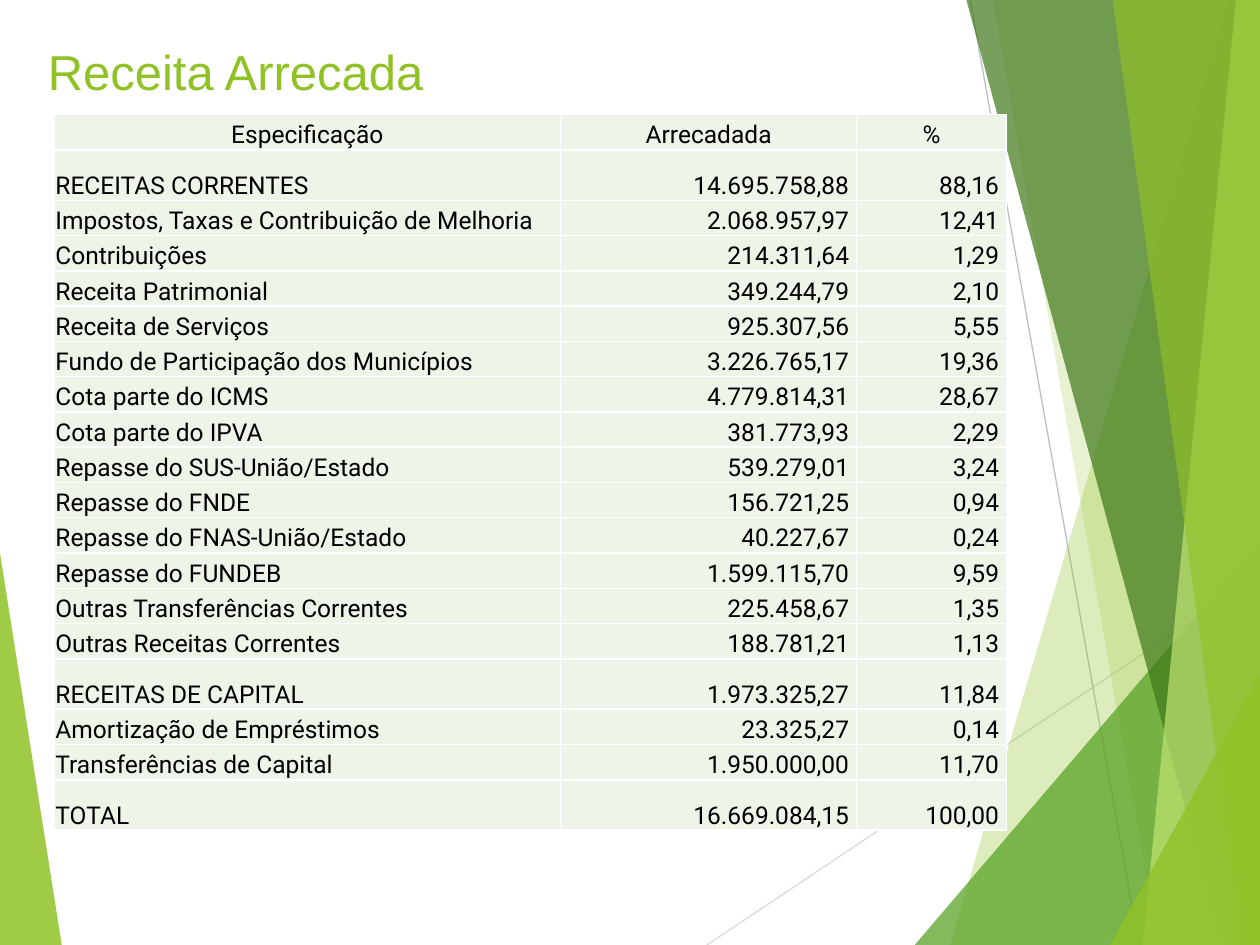
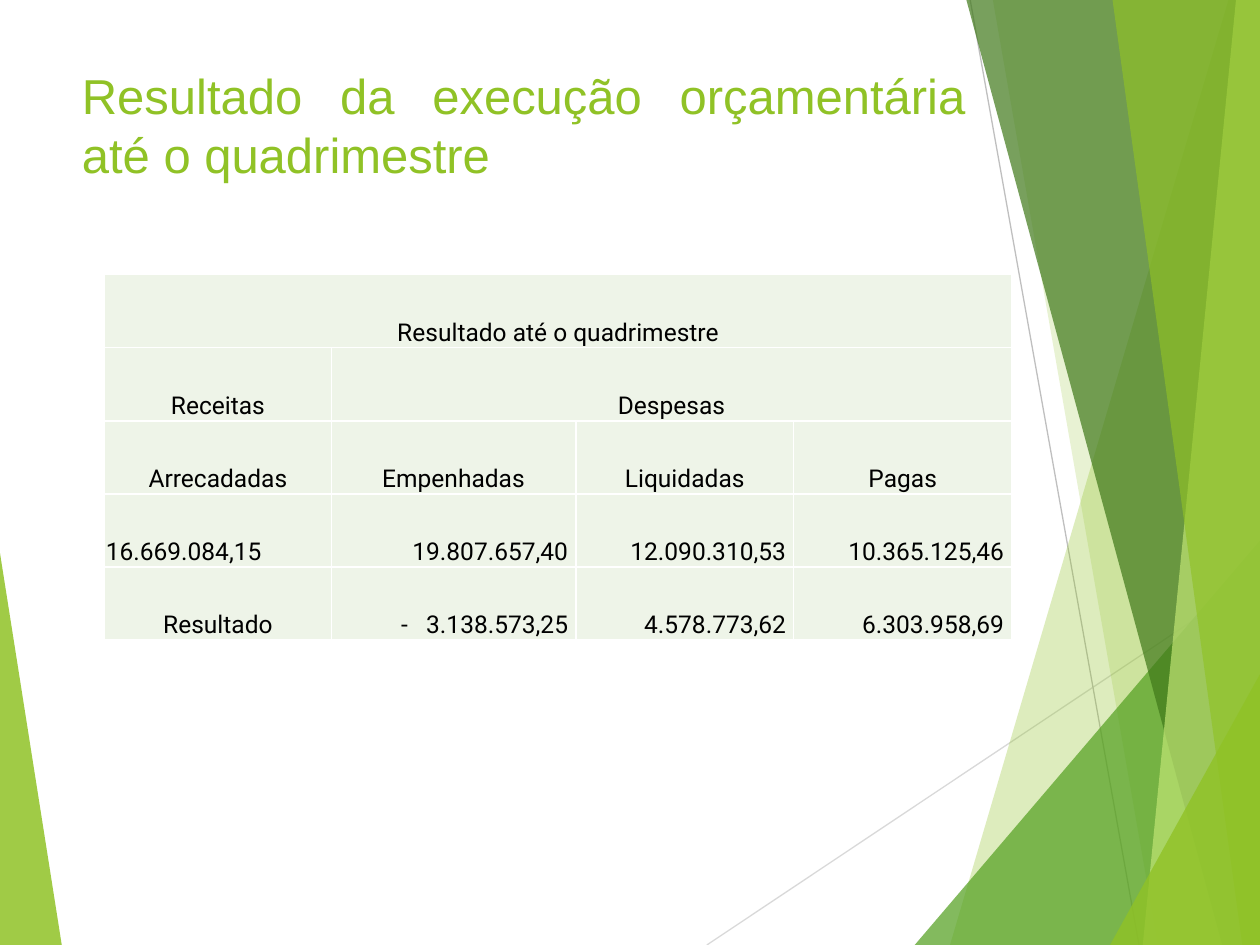
import pptx
import pptx.dml.color
import pptx.enum.text
import pptx.oxml
import pptx.oxml.ns
import pptx.util
from pptx.dml.color import RGBColor
from pptx.enum.text import MSO_ANCHOR, MSO_AUTO_SIZE, PP_ALIGN
from pptx.oxml.ns import qn
from pptx.util import Inches

SLIDE_W, SLIDE_H = 10, 7.5
LIME = RGBColor(0x90, 0xC2, 0x26)
GREEN = RGBColor(0x54, 0xA0, 0x21)
DARK_GREEN = RGBColor(0x3F, 0x78, 0x19)
PALE_LIME = RGBColor(0xC0, 0xE4, 0x74)
CELL_GREEN = RGBColor(0xEE, 0xF4, 0xE8)
LIGHT_GREY = RGBColor(0xD9, 0xD9, 0xD9)
MID_GREY = RGBColor(0xBF, 0xBF, 0xBF)
BLACK = RGBColor(0, 0, 0)
WHITE = RGBColor(0xFF, 0xFF, 0xFF)
TITLE_FONT, TABLE_FONT = "Arial", "Roboto"
ALIGNMENTS = {"l": PP_ALIGN.LEFT, "c": PP_ALIGN.CENTER, "r": PP_ALIGN.RIGHT}

LEFT_WEDGE = ([(0, 4.39), (0.49, SLIDE_H), (0, SLIDE_H)], LIME, 85)
RAYS = [
    ((5.61, SLIDE_H), (SLIDE_W, 4.57), LIGHT_GREY),
    ((7.7, 0), (9.04, SLIDE_H), MID_GREY),
]


def right_band(top_x, bottom_x, color, opacity):
    """Full-height band running to the right edge of the slide."""
    return ([(top_x, 0), (bottom_x, SLIDE_H), (SLIDE_W, SLIDE_H), (SLIDE_W, 0)],
            color, opacity)


def corner_wedge(left, top, color, opacity):
    """Triangle in the bottom right corner of the slide."""
    return ([(left, SLIDE_H), (SLIDE_W, top), (SLIDE_W, SLIDE_H)], color, opacity)


RIGHT_FACETS = [
    right_band(9.75, 7.54, LIME, 30),
    right_band(7.88, 9.19, LIME, 20),
    corner_wedge(7.26, 4.29, GREEN, 72),
    right_band(7.67, 9.7, DARK_GREEN, 70),
    right_band(9.81, 9.07, PALE_LIME, 70),
    right_band(8.83, 9.86, LIME, 65),
    corner_wedge(8.81, 5.35, LIME, 80),
]

REVENUE_ROWS = [
    ("Especificação", "Arrecadada", "%"),
    ("RECEITAS CORRENTES", "14.695.758,88", "88,16"),
    ("Impostos, Taxas e Contribuição de Melhoria", "2.068.957,97", "12,41"),
    ("Contribuições", "214.311,64", "1,29"),
    ("Receita Patrimonial", "349.244,79", "2,10"),
    ("Receita de Serviços", "925.307,56", "5,55"),
    ("Fundo de Participação dos Municípios", "3.226.765,17", "19,36"),
    ("Cota parte do ICMS", "4.779.814,31", "28,67"),
    ("Cota parte do IPVA", "381.773,93", "2,29"),
    ("Repasse do SUS-União/Estado", "539.279,01", "3,24"),
    ("Repasse do FNDE", "156.721,25", "0,94"),
    ("Repasse do FNAS-União/Estado", "40.227,67", "0,24"),
    ("Repasse do FUNDEB", "1.599.115,70", "9,59"),
    ("Outras Transferências Correntes", "225.458,67", "1,35"),
    ("Outras Receitas Correntes", "188.781,21", "1,13"),
    ("RECEITAS DE CAPITAL", "1.973.325,27", "11,84"),
    ("Amortização de Empréstimos", "23.325,27", "0,14"),
    ("Transferências de Capital", "1.950.000,00", "11,70"),
    ("TOTAL", "16.669.084,15", "100,00"),
]
GROUP_ROWS = ("RECEITAS CORRENTES", "RECEITAS DE CAPITAL", "TOTAL")

RESULT_ROWS = [
    ("Resultado até o quadrimestre", "", "", ""),
    ("Receitas", "Despesas", "", ""),
    ("Arrecadadas", "Empenhadas", "Liquidadas", "Pagas"),
    ("16.669.084,15", "19.807.657,40", "12.090.310,53", "10.365.125,46"),
    ("Resultado", "- 3.138.573,25", "4.578.773,62", "6.303.958,69"),
]
RESULT_ALIGNMENTS = ["cccc", "cccc", "cccc", "lrrr", "crrr"]


def add_facet(slide, points, color, opacity):
    corners = [(Inches(x), Inches(y)) for x, y in points]
    builder = slide.shapes.build_freeform(*corners[0])
    builder.add_line_segments(corners[1:], close=True)
    facet = builder.convert_to_shape()
    facet.shadow.inherit = False
    facet.fill.solid()
    facet.fill.fore_color.rgb = color
    facet.line.fill.background()
    tint = facet.element.spPr.find(qn("a:solidFill")).find(qn("a:srgbClr"))
    pptx.oxml.ns  # namespaces used for the opacity element
    tint.append(pptx.oxml.parse_xml(
        f'<a:alpha {pptx.oxml.ns.nsdecls("a")} val="{opacity * 1000}"/>'))


def add_ray(slide, start, end, color):
    ray = slide.shapes.add_connector(
        pptx.enum.shapes.MSO_CONNECTOR.STRAIGHT,
        *(Inches(value) for value in start + end))
    ray.line.color.rgb = color
    ray.line.width = pptx.util.Pt(0.75)
    ray.element.spPr.append(
        pptx.oxml.parse_xml(f'<a:effectLst {pptx.oxml.ns.nsdecls("a")}/>'))


def add_backdrop(slide):
    add_facet(slide, *LEFT_WEDGE)
    for ray in RAYS:
        add_ray(slide, *ray)
    for facet in RIGHT_FACETS:
        add_facet(slide, *facet)


def add_run(paragraph, text, font_name, size, color):
    run = paragraph.add_run()
    run.text = text
    run.font.name = font_name
    run.font.size = pptx.util.Pt(size)
    run.font.color.rgb = color
    return run


def place_title(slide, text, box, alignment):
    title = slide.shapes.title
    title.left, title.top, title.width, title.height = map(Inches, box)
    frame = title.text_frame
    frame.word_wrap = True
    frame.auto_size = MSO_AUTO_SIZE.NONE
    frame.vertical_anchor = MSO_ANCHOR.TOP
    paragraph = frame.paragraphs[0]
    paragraph.alignment = alignment
    add_run(paragraph, text, TITLE_FONT, 28, LIME)
    title.element.getparent().append(title.element)  # in front of the backdrop


def outline_cell(cell):
    """Draw the white 1 pt border; its lines must precede the cell fill."""
    properties = cell._tc.get_or_add_tcPr()
    for position, side in enumerate(("lnL", "lnR", "lnT", "lnB")):
        properties.insert(position, pptx.oxml.parse_xml(
            f'<a:{side} {pptx.oxml.ns.nsdecls("a")} w="12700"><a:solidFill>'
            f'<a:srgbClr val="{WHITE}"/></a:solidFill></a:{side}>'))


def fill_cell(cell, text, align):
    cell.fill.solid()
    cell.fill.fore_color.rgb = CELL_GREEN
    outline_cell(cell)
    cell.vertical_anchor = MSO_ANCHOR.BOTTOM
    cell.margin_left = cell.margin_top = Inches(0.01)
    cell.margin_right = Inches(0.06 if align == "r" else 0.01)
    cell.margin_bottom = 0
    paragraph = cell.text_frame.paragraphs[0]
    paragraph.alignment = ALIGNMENTS[align]
    if text.startswith("- "):
        sign = add_run(paragraph, "- ", TABLE_FONT, 14, BLACK)
        sign.font._element.set("spc", "350")  # sets the minus sign apart
        text = text[2:]
    if text:
        add_run(paragraph, text, TABLE_FONT, 14, BLACK)


def add_finance_table(slide, origin, widths, heights, rows, alignments, merges=()):
    left, top = origin
    table = slide.shapes.add_table(
        len(rows), len(widths), Inches(left), Inches(top),
        Inches(sum(widths)), Inches(sum(heights))).table
    table.first_row = table.horz_banding = False
    for column, width in zip(table.columns, widths):
        column.width = Inches(width)
    for row, height in zip(table.rows, heights):
        row.height = Inches(height)
    for r, (texts, aligns) in enumerate(zip(rows, alignments)):
        for c, (text, align) in enumerate(zip(texts, aligns)):
            fill_cell(table.cell(r, c), text, align)
    for first, last in merges:
        table.cell(*first).merge(table.cell(*last))


def add_title_slide(deck):
    slide = deck.slides.add_slide(deck.slide_layouts[5])
    add_backdrop(slide)
    return slide


def build_revenue_slide(deck):
    slide = add_title_slide(deck)
    place_title(slide, "Receita Arrecada", (0.28, 0.28, 9, 0.71), PP_ALIGN.LEFT)
    heights = [0.4 if row[0] in GROUP_ROWS else 0.28 for row in REVENUE_ROWS]
    alignments = ["ccc"] + ["lrr"] * (len(REVENUE_ROWS) - 1)
    add_finance_table(slide, (0.43, 0.91), [4.02, 2.35, 1.19], heights,
                      REVENUE_ROWS, alignments)


def build_result_slide(deck):
    slide = add_title_slide(deck)
    place_title(slide, "Resultado da execução orçamentária até o quadrimestre",
                (0.55, 0.47, 7.21, 1.07), PP_ALIGN.JUSTIFY)
    add_finance_table(slide, (0.83, 2.18), [1.8, 1.94, 1.73, 1.73],
                      [0.58] * len(RESULT_ROWS), RESULT_ROWS, RESULT_ALIGNMENTS,
                      merges=[((0, 0), (0, 3)), ((1, 1), (1, 3))])


def main():
    deck = pptx.Presentation()
    deck.slide_width, deck.slide_height = Inches(SLIDE_W), Inches(SLIDE_H)
    build_revenue_slide(deck)
    build_result_slide(deck)
    deck.save("out.pptx")


if __name__ == "__main__":
    main()
